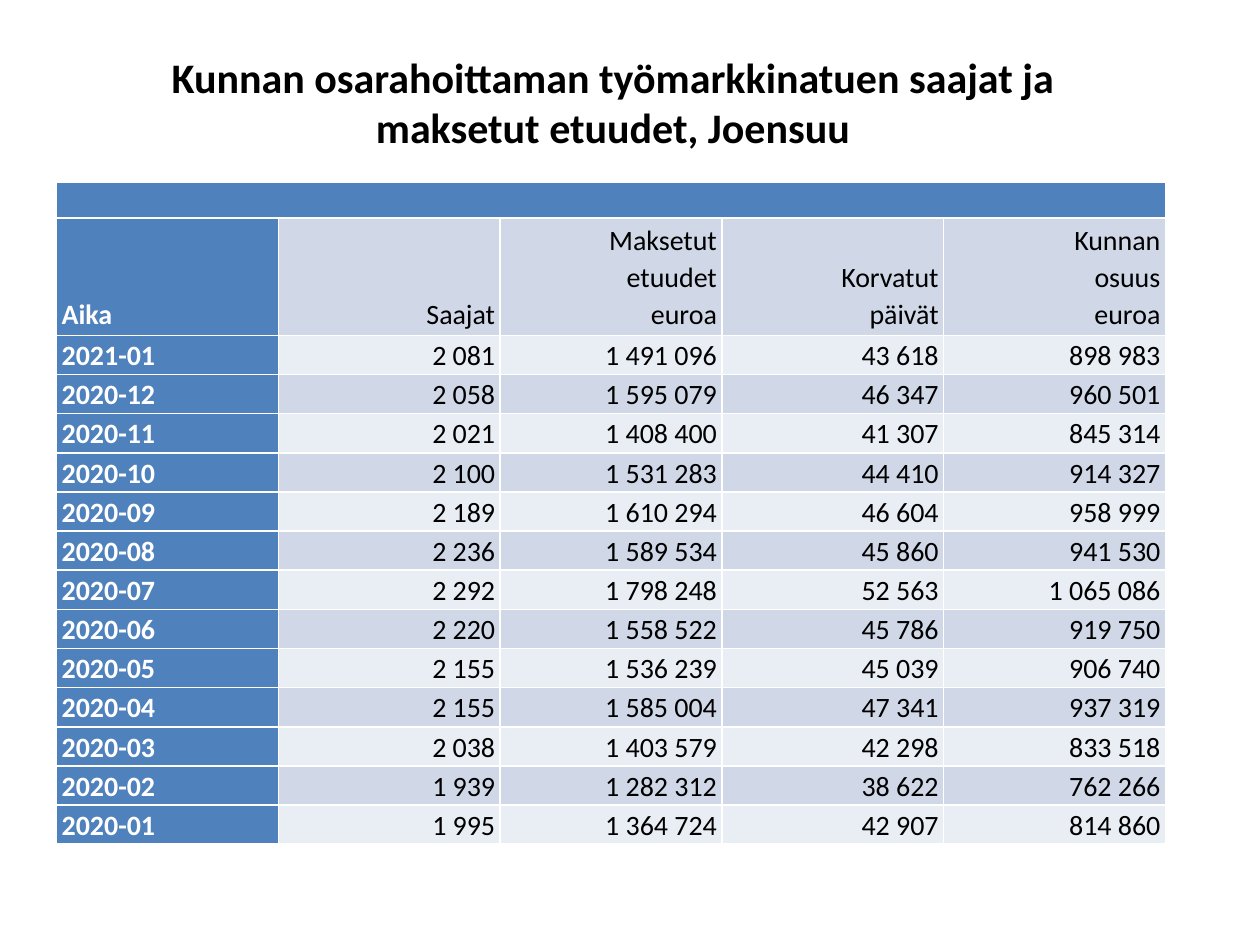
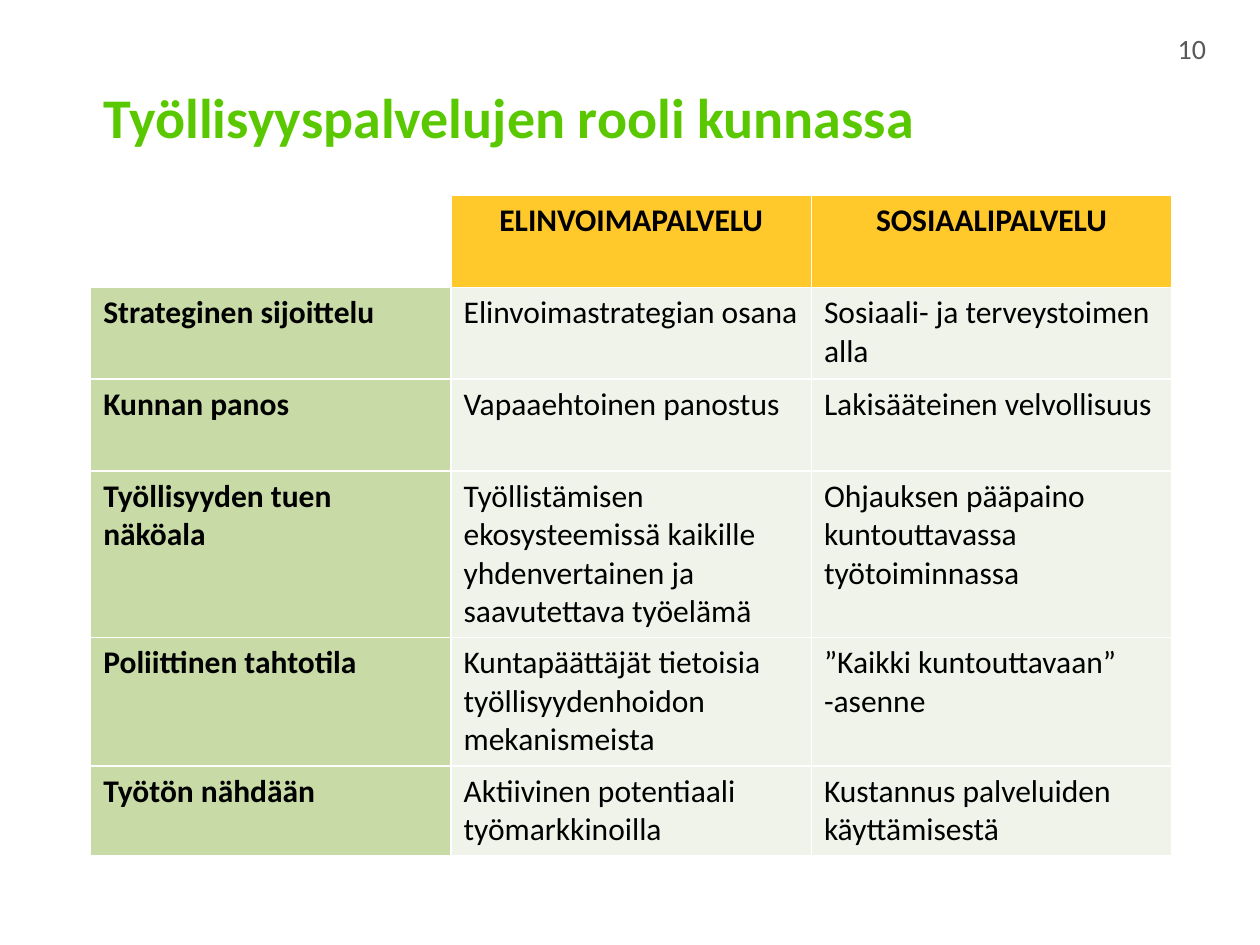
from lxml import etree
from pptx import Presentation
from pptx.dml.color import RGBColor
from pptx.enum.text import MSO_ANCHOR, PP_ALIGN
from pptx.oxml.ns import qn
from pptx.util import Inches, Pt

LEFT, CENTER, RIGHT = PP_ALIGN.LEFT, PP_ALIGN.CENTER, PP_ALIGN.RIGHT
TOP, MIDDLE, BOTTOM = MSO_ANCHOR.TOP, MSO_ANCHOR.MIDDLE, MSO_ANCHOR.BOTTOM
FONT = "Calibri"
COLORS = {
    "black": "000000",
    "white": "FFFFFF",
    "gray": "595959",
    "blue": "4F81BD",
    "blue band": "D0D8E8",
    "pale band": "E9EDF4",
    "title green": "5AC800",
    "yellow": "FFC92B",
    "row green": "9BBB59",
    "pale green": "EFF3EA",
}
TABLE_FONT_SIZE = {"benefits": 16, "roles": 18}


def write(frame, text, size, color="black", bold=False, align=LEFT):
    """Fill a text frame, one paragraph per item; a newline is a line break."""
    frame.word_wrap = True
    lines = text if isinstance(text, list) else [text]
    for index, line in enumerate(lines):
        para = frame.add_paragraph() if index else frame.paragraphs[0]
        para.text = line
        para.alignment = align
        para.font.name = FONT
        para.font.size = Pt(size)
        para.font.bold = bold
        para.font.color.rgb = RGBColor.from_string(COLORS[color])


def add_grid(page, left, top, column_width, columns, row_heights):
    """Add a table with equal columns and return it."""
    frame = page.shapes.add_table(
        len(row_heights), columns, Inches(left), Inches(top),
        Inches(column_width * columns), Inches(sum(row_heights)))
    for column in frame.table.columns:
        column.width = Inches(column_width)
    for row, height in zip(frame.table.rows, row_heights):
        row.height = Inches(height)
    return frame.table


deck = Presentation()
deck.slide_width, deck.slide_height = Inches(10), Inches(7.5)
title_only = deck.slide_layouts[5]

titles = [
    ("Kunnan osarahoittaman työmarkkinatuen saajat ja maksetut etuudet, Joensuu",
     (0.62, 0.36, 8.49, 0.89), 24, "black", CENTER),
    ("Työllisyyspalvelujen rooli kunnassa",
     (0.72, 0.3, 8.78, 1.25), 32, "title green", LEFT),
]
for text, place, size, color, align in titles:
    title = deck.slides.add_slide(title_only).shapes.title
    title.left, title.top, title.width, title.height = map(Inches, place)
    title.text_frame.vertical_anchor = MIDDLE
    write(title.text_frame, text, size, color, True, align)
benefits_page, roles_page = deck.slides

# Benefits by month
benefits = [
    ["Aika", "Saajat", "Maksetut\netuudet\neuroa", "Korvatut\npäivät", "Kunnan\nosuus\neuroa"],
    ["2021-01", "2 081", "1 491 096", "43 618", "898 983"],
    ["2020-12", "2 058", "1 595 079", "46 347", "960 501"],
    ["2020-11", "2 021", "1 408 400", "41 307", "845 314"],
    ["2020-10", "2 100", "1 531 283", "44 410", "914 327"],
    ["2020-09", "2 189", "1 610 294", "46 604", "958 999"],
    ["2020-08", "2 236", "1 589 534", "45 860", "941 530"],
    ["2020-07", "2 292", "1 798 248", "52 563", "1 065 086"],
    ["2020-06", "2 220", "1 558 522", "45 786", "919 750"],
    ["2020-05", "2 155", "1 536 239", "45 039", "906 740"],
    ["2020-04", "2 155", "1 585 004", "47 341", "937 319"],
    ["2020-03", "2 038", "1 403 579", "42 298", "833 518"],
    ["2020-02", "1 939", "1 282 312", "38 622", "762 266"],
    ["2020-01", "1 995", "1 364 724", "42 907", "814 860"],
]
months = len(benefits) - 1
grid = add_grid(benefits_page, 0.45, 1.45, 1.76, 5, [0.28, 0.93] + [0.3] * months)

banner = grid.cell(0, 0)
banner.merge(grid.cell(0, 4))
banner.margin_top = banner.margin_bottom = 0
banner.fill.solid()
banner.fill.fore_color.rgb = RGBColor.from_string(COLORS["blue"])
write(banner.text_frame, "", 12)

for row, values in enumerate(benefits, start=1):
    for column, value in enumerate(values):
        cell = grid.cell(row, column)
        is_label = column == 0
        band = "blue band" if row % 2 else "pale band"
        cell.fill.solid()
        cell.fill.fore_color.rgb = RGBColor.from_string(COLORS["blue" if is_label else band])
        cell.margin_left = cell.margin_right = Inches(0.04)
        cell.margin_top = cell.margin_bottom = Inches(0.03 if row == 1 else 0.01)
        cell.vertical_anchor = BOTTOM if row == 1 else TOP
        write(cell.text_frame, value, TABLE_FONT_SIZE["benefits"],
              "white" if is_label else "black", is_label, LEFT if is_label else RIGHT)
        cell.text_frame.paragraphs[0].line_spacing = 1.07

# Two views of the employment services
roles = [
    ["", "ELINVOIMAPALVELU", "SOSIAALIPALVELU"],
    ["Strateginen sijoittelu", "Elinvoimastrategian osana", "Sosiaali- ja terveystoimen alla"],
    ["Kunnan panos", "Vapaaehtoinen panostus", "Lakisääteinen velvollisuus"],
    ["Työllisyyden tuen näköala",
     "Työllistämisen ekosysteemissä kaikille yhdenvertainen ja saavutettava työelämä",
     "Ohjauksen pääpaino kuntouttavassa työtoiminnassa"],
    ["Poliittinen tahtotila", "Kuntapäättäjät tietoisia työllisyydenhoidon mekanismeista",
     ["”Kaikki kuntouttavaan”", "-asenne"]],
    ["Työtön nähdään", "Aktiivinen potentiaali työmarkkinoilla",
     "Kustannus palveluiden käyttämisestä"],
]
grid = add_grid(roles_page, 0.72, 1.55, 2.86, 3, [0.73, 0.73, 0.73, 1.32, 1.02, 0.7])
for row, values in enumerate(roles):
    for column, value in enumerate(values):
        cell = grid.cell(row, column)
        is_header, is_label = row == 0, column == 0
        write(cell.text_frame, value, TABLE_FONT_SIZE["roles"],
              bold=is_header or is_label, align=CENTER if is_header else LEFT)
        if is_header and is_label:
            cell.fill.background()
            continue
        color = "yellow" if is_header else "row green" if is_label else "pale green"
        cell.fill.solid()
        cell.fill.fore_color.rgb = RGBColor.from_string(COLORS[color])
        if is_label:
            tint = next(cell.fill._xPr.iter(qn("a:srgbClr")))
            etree.SubElement(tint, qn("a:alpha")).set("val", "54000")

number = roles_page.shapes.add_textbox(Inches(7.34), Inches(0.18), Inches(2.33), Inches(0.4))
number.text_frame.vertical_anchor = MIDDLE
write(number.text_frame, "10", 16, "gray", align=RIGHT)

deck.save("out.pptx")
